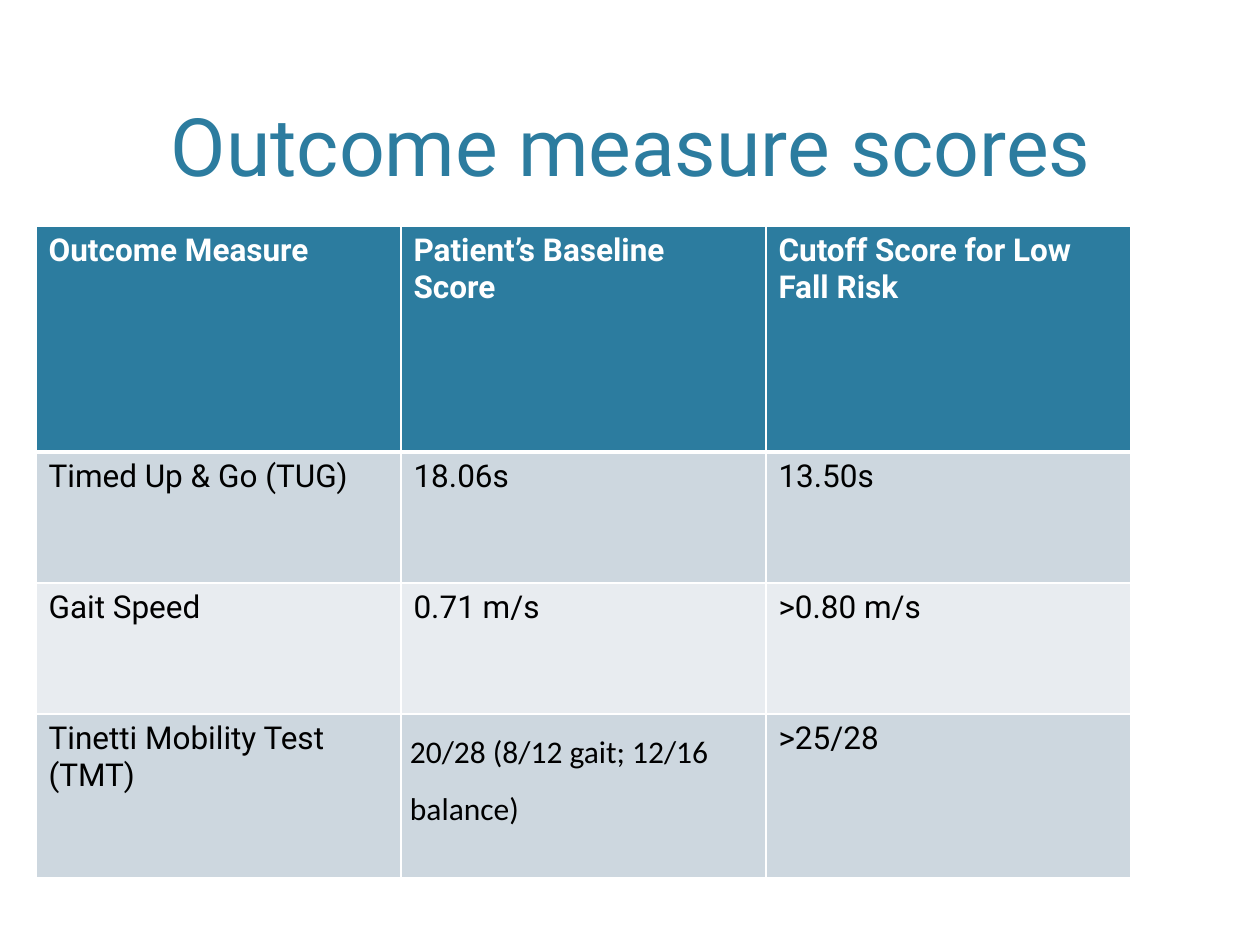
from lxml.etree import SubElement
from pptx import Presentation
from pptx.dml.color import RGBColor
from pptx.enum.text import MSO_ANCHOR, PP_ALIGN
from pptx.oxml.ns import qn
from pptx.util import Emu, Pt

PX = 914400 // 126
TEAL = RGBColor(0x2C, 0x7C, 0x9F)
BLUE_GREY = RGBColor(0xCD, 0xD7, 0xDF)
PALE_GREY = RGBColor(0xE8, 0xEC, 0xF0)
WHITE = RGBColor(0xFF, 0xFF, 0xFF)
BLACK = RGBColor(0, 0, 0)

TITLE = "Outcome measure scores"
ROWS = [
    ("Outcome Measure", "Patient’s Baseline Score", "Cutoff Score for Low Fall Risk"),
    ("Timed Up & Go (TUG)", "18.06s", "13.50s"),
    ("Gait Speed", "0.71 m/s", ">0.80 m/s"),
    ("Tinetti Mobility Test (TMT)", "20/28 (8/12 gait; 12/16 balance)", ">25/28"),
]
ROW_HEIGHTS = [226, 131, 131, 164]
COLUMN_WIDTH = 365
TINETTI_SCORE = (3, 1)


def px(length):
    return Emu(length * PX)


def write(frame, text, size=18, color=BLACK, font="Roboto", bold=False,
          align=PP_ALIGN.LEFT, spacing=None):
    paragraph = frame.paragraphs[0]
    paragraph.alignment = align
    paragraph.line_spacing = spacing
    run = paragraph.add_run()
    run.text = text
    run.font.size = Pt(size)
    run.font.name = font
    run.font.bold = bold
    run.font.color.rgb = color


def add_borders(cell, bottom=1, top=1):
    """Draw white cell edges; call before filling, as lines precede the fill."""
    properties = cell._tc.get_or_add_tcPr()
    for tag, width in (("lnL", 1), ("lnR", 1), ("lnT", top), ("lnB", bottom)):
        line = SubElement(properties, qn(f"a:{tag}"), w=str(Pt(width)))
        fill = SubElement(line, qn("a:solidFill"))
        SubElement(fill, qn("a:srgbClr"), val=str(WHITE))


def add_title(slide):
    title = slide.shapes.title
    title.left, title.top, title.width, title.height = map(px, (76, 15, 1109, 184))
    title.text_frame.word_wrap = True
    title.text_frame.vertical_anchor = MSO_ANCHOR.BOTTOM
    write(title.text_frame, TITLE, size=46, color=TEAL, align=PP_ALIGN.CENTER)


def add_score_table(slide):
    column_count = len(ROWS[0])
    table = slide.shapes.add_table(
        len(ROWS), column_count, px(36), px(226),
        px(COLUMN_WIDTH * column_count), px(sum(ROW_HEIGHTS))).table
    for column in table.columns:
        column.width = px(COLUMN_WIDTH)
    for row_index, texts in enumerate(ROWS):
        table.rows[row_index].height = px(ROW_HEIGHTS[row_index])
        header = row_index == 0
        band = BLUE_GREY if row_index % 2 else PALE_GREY
        for column_index, text in enumerate(texts):
            cell = table.cell(row_index, column_index)
            add_borders(cell, bottom=3 if header else 1, top=3 if row_index == 1 else 1)
            cell.fill.solid()
            cell.fill.fore_color.rgb = TEAL if header else band
            if (row_index, column_index) == TINETTI_SCORE:
                cell.margin_left = cell.margin_right = px(9)
                cell.margin_top = cell.margin_bottom = 0
                write(cell.text_frame, text, font="Calibri", spacing=1.5)
            else:
                write(cell.text_frame, text, color=WHITE if header else BLACK, bold=header)


def main():
    presentation = Presentation()
    presentation.slide_width, presentation.slide_height = px(1260), px(945)
    slide = presentation.slides.add_slide(presentation.slide_layouts[5])
    add_title(slide)
    add_score_table(slide)
    presentation.save("out.pptx")


if __name__ == "__main__":
    main()
